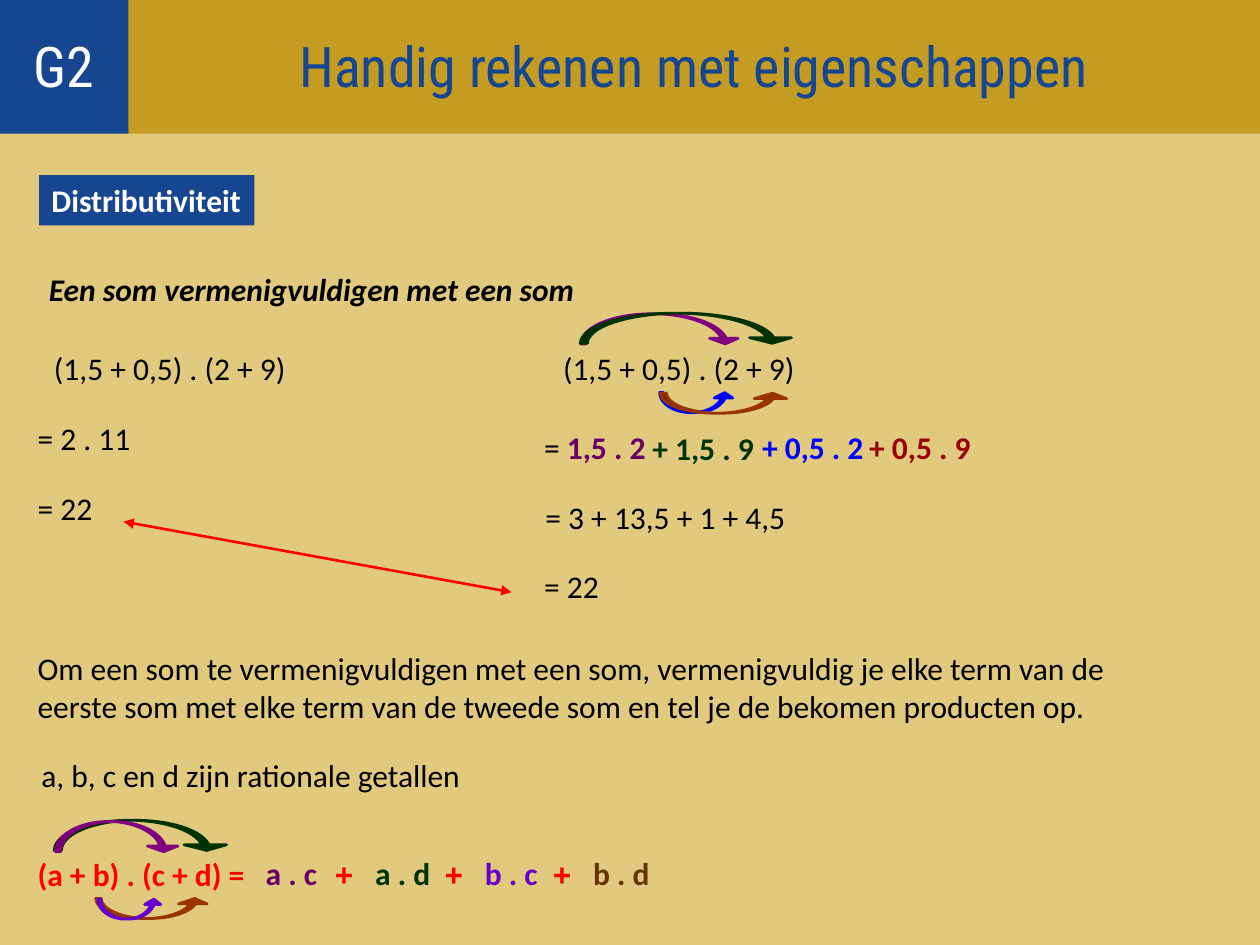
"""Builds a slide on the distributive property: multiplying a sum by a sum."""
from lxml.etree import SubElement
from pptx import Presentation
from pptx.dml.color import RGBColor
from pptx.enum.shapes import MSO_CONNECTOR, MSO_SHAPE
from pptx.enum.text import MSO_ANCHOR, MSO_AUTO_SIZE, PP_ALIGN
from pptx.oxml.ns import qn
from pptx.util import Inches, Pt

COLORS = {
    "sand": "E1CA7D", "gold": "C59C22", "navy": "174691", "white": "FFFFFF",
    "offwhite": "FCFDFE", "black": "000000", "red": "FF0000", "plum": "660066",
    "purple": "800080", "green": "003300", "blue": "0000FF", "maroon": "990000",
    "rust": "993300", "brown": "663300", "violet": "6600CC",
}
BODY_FONT, HEADING_FONT, SIGN_FONT = "Calibri", "Roboto Condensed", "Arial"
OVER, UNDER = MSO_SHAPE.CURVED_LEFT_ARROW, MSO_SHAPE.CURVED_RIGHT_ARROW


class SlideBuilder:
    def __init__(self, presentation):
        self.slide = presentation.slides.add_slide(presentation.slide_layouts[5])
        self.fill(self.slide.background, "sand")

    def fill(self, target, color):
        target.fill.solid()
        target.fill.fore_color.rgb = RGBColor.from_string(COLORS[color])

    def style(self, run, color="black", size=18, font=BODY_FONT, bold=False, italic=False):
        run.font.name, run.font.size = font, Pt(size)
        run.font.bold, run.font.italic = bold, italic
        run.font.color.rgb = RGBColor.from_string(COLORS[color])

    def heading(self, shape, text, color):
        frame = shape.text_frame
        frame.text = text
        frame.auto_size = MSO_AUTO_SIZE.NONE
        frame.vertical_anchor = MSO_ANCHOR.MIDDLE
        paragraph = frame.paragraphs[0]
        paragraph.alignment = PP_ALIGN.CENTER
        self.style(paragraph.runs[0], color, 32, HEADING_FONT)

    def title(self, text, left, top, width, height, inset):
        shape = self.slide.shapes.title
        shape.left, shape.top = Inches(left), Inches(top)
        shape.width, shape.height = Inches(width), Inches(height)
        self.fill(shape, "gold")
        self.heading(shape, text, "navy")
        shape.text_frame.margin_left = Inches(inset)

    def badge(self, text, left, top, width, height):
        shape = self.slide.shapes.add_shape(
            MSO_SHAPE.RECTANGLE, Inches(left), Inches(top), Inches(width), Inches(height))
        shape.shadow.inherit = False
        self.fill(shape, "navy")
        shape.line.fill.background()
        self.heading(shape, text, "offwhite")

    def text(self, left, top, width, *parts, height=0.4, wrap=False, **style):
        box = self.slide.shapes.add_textbox(
            Inches(left), Inches(top), Inches(width), Inches(height))
        frame = box.text_frame
        frame.word_wrap = wrap
        frame.auto_size = MSO_AUTO_SIZE.SHAPE_TO_FIT_TEXT
        for part in parts:
            run = frame.paragraphs[0].add_run()
            run.text = part
            self.style(run, **style)
        return box

    def arc(self, kind, left, top, width, height, color, adjustments):
        shape = self.slide.shapes.add_shape(
            kind, Inches(left), Inches(top), Inches(width), Inches(height))
        shape.rotation = 270
        shape.shadow.inherit = False
        for index, value in enumerate(adjustments):
            shape.adjustments[index] = value
        self.fill(shape, color)
        self.fill(shape.line, color)
        shape.line.width = Pt(1.5)

    def double_arrow(self, start, end, color):
        connector = self.slide.shapes.add_connector(
            MSO_CONNECTOR.STRAIGHT, *(Inches(value) for value in start + end))
        self.fill(connector.line, color)
        connector.line.width = Pt(1.5)
        for tag in ("a:headEnd", "a:tailEnd"):
            SubElement(connector.line._get_or_add_ln(), qn(tag), type="triangle")
        SubElement(connector._element.spPr, qn("a:effectLst"))


def main():
    presentation = Presentation()
    presentation.slide_width, presentation.slide_height = Inches(10), Inches(7.5)
    builder = SlideBuilder(presentation)

    builder.title("Handig rekenen met eigenschappen", 0, -0.03, 10, 1.09, inset=1.12)
    builder.badge("G2", 0, -0.03, 1.02, 1.09)
    label = builder.text(0.31, 1.39, 1.71, "Distributiviteit", color="white", bold=True)
    builder.fill(label, "navy")
    builder.text(0.29, 2.09, 4.39, "Een som vermenigvuldigen met een som",
                 bold=True, italic=True)

    for left, top, width, text in (
        (0.33, 2.72, 2.05, "(1,5 + 0,5) . (2 + 9)"),
        (0.2, 3.28, 0.94, "= 2 . 11"),
        (0.2, 3.83, 0.64, "= 22"),
        (4.37, 2.72, 2.05, "(1,5 + 0,5) . (2 + 9)"),
        (4.23, 3.9, 2.11, "= 3 + 13,5 + 1 + 4,5"),
        (4.22, 4.45, 0.64, "= 22"),
        (0.23, 5.95, 3.55, "a, b, c en d zijn rationale getallen"),
    ):
        builder.text(left, top, width, text)

    expansion = builder.text(4.22, 3.35, 1.01, "= ", "1,5 . 2")
    builder.style(expansion.text_frame.paragraphs[0].runs[1], "plum", bold=True)

    builder.text(0.2, 5.1, 9.29,
                 "Om een som te vermenigvuldigen met een som, vermenigvuldig je elke "
                 "term van de eerste som met elke term van de tweede som en tel je de "
                 "bekomen producten op.", height=0.7, wrap=True)

    for left, top, width, text, color in (
        (5.08, 3.36, 1.07, "+ 1,5 . 9", "green"),
        (5.95, 3.35, 1.01, "+ 0,5 . 2", "blue"),
        (6.8, 3.35, 1.01, "+ 0,5 . 9", "maroon"),
        (0.2, 6.74, 1.85, "(a + b) . (c + d) =", "red"),
        (2.01, 6.73, 0.61, "a . c", "plum"),
        (2.88, 6.73, 0.64, "a . d", "green"),
        (3.75, 6.73, 0.62, "b . c", "violet"),
        (4.61, 6.73, 0.65, "b . d", "brown"),
    ):
        builder.text(left, top, width, text, color=color, bold=True)

    for left in (2.56, 3.43, 4.29):
        builder.text(left, 6.74, 0.35, "+", color="red", font=SIGN_FONT, bold=True)

    for arc in (
        (OVER, 1, 5.94, 0.24, 1.38, "green", (0.24, 1.41, 0.19)),
        (OVER, 0.81, 6.15, 0.24, 0.98, "purple", (0.17, 1.01, 0.19)),
        (UNDER, 1.13, 6.76, 0.16, 0.9, "rust", (0.28, 1.43, 0.27)),
        (UNDER, 0.95, 6.96, 0.16, 0.51, "violet", (0.16, 0.81, 0.27)),
        (OVER, 5.12, 1.98, 0.24, 1.26, "purple", (0.16, 0.95, 0.19)),
        (UNDER, 5.45, 2.9, 0.16, 0.59, "blue", (0.19, 0.93, 0.27)),
        (UNDER, 5.67, 2.69, 0.16, 1.02, "rust", (0.32, 1.62, 0.27)),
        (OVER, 5.33, 1.76, 0.24, 1.69, "green", (0.24, 1.39, 0.19)),
    ):
        builder.arc(*arc)

    builder.double_arrow((0.98, 4.14), (4.06, 4.7), "red")
    presentation.save("out.pptx")


if __name__ == "__main__":
    main()
